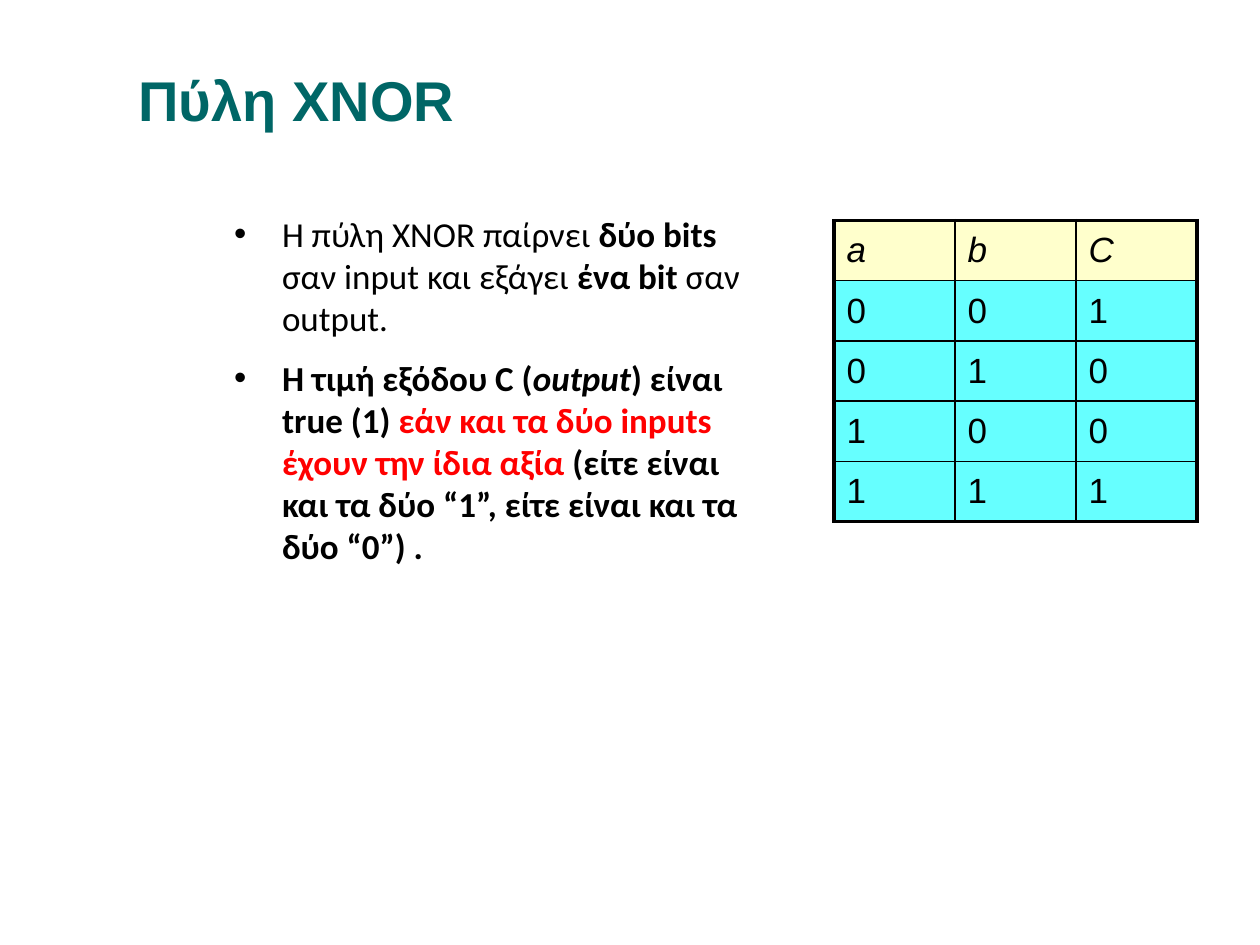
from lxml import etree
from pptx import Presentation
from pptx.dml.color import RGBColor
from pptx.enum.text import MSO_ANCHOR
from pptx.oxml.ns import qn
from pptx.util import Inches, Pt

MIDDLE, TOP = MSO_ANCHOR.MIDDLE, MSO_ANCHOR.TOP
COLORS = {"title": "006666", "text": "000000", "accent": "FF0000",
          "header": "FFFFCC", "body": "66FFFF", "border": "000000"}
TITLE = {"name": "Arial", "size": Pt(32), "bold": True}
BODY = {"name": "Calibri", "size": Pt(20)}
CELL = {"name": "Arial", "size": Pt(20)}
BOLD = {"bold": True}
THIN, THICK = Pt(1), Pt(2.25)

# Each bullet is a list of (words, format, colour) spans
BULLETS = [
    [("Η πύλη ΧΝOR παίρνει ", {}, "text"), ("δύο bits", BOLD, "text"),
     (" σαν input και εξάγει ", {}, "text"), ("ένα bit", BOLD, "text"),
     (" σαν output.", {}, "text")],
    [("Η τιμή εξόδου C (", BOLD, "text"),
     ("output", {"bold": True, "italic": True}, "text"),
     (") είναι true (1) ", BOLD, "text"),
     ("εάν και τα δύο inputs έχουν την ίδια αξία", BOLD, "accent"),
     (" (είτε είναι και τα δύο “1”, είτε είναι και τα δύο “0”) .", BOLD, "text")],
]
TRUTH_TABLE = ["abC", "001", "010", "100", "111"]


def add_span(para, words, formats, color):
    span = para.add_run()
    span.text = words
    for name, value in formats.items():
        setattr(span.font, name, value)
    span.font.color.rgb = RGBColor.from_string(COLORS[color])


def add_box(page, left, top, width, height, anchor):
    box = page.shapes.add_textbox(*map(Inches, (left, top, width, height)))
    box.text_frame.word_wrap = True
    box.text_frame.vertical_anchor = anchor
    return box.text_frame


def indent(para, left, first=0):
    properties = para._p.get_or_add_pPr()
    properties.set("marL", str(Inches(left)))
    properties.set("indent", str(Inches(first)))
    return properties


def add_title(page):
    para = add_box(page, 0.5, 0.16, 9, 1.25, MIDDLE).paragraphs[0]
    indent(para, 0.5)
    add_span(para, "Πύλη XΝOR", TITLE, "title")


def add_bullets(page):
    frame = add_box(page, 1.76, 1.64, 4.42, 4.95, TOP)
    for index, spans in enumerate(BULLETS):
        para = frame.add_paragraph() if index else frame.paragraphs[0]
        properties = indent(para, 0.38, -0.38)
        etree.SubElement(properties, qn("a:buFont"), typeface="Arial")
        etree.SubElement(properties, qn("a:buChar"), char="•")
        para.space_before = Pt(10 if index else 0)
        for words, formats, color in spans:
            add_span(para, words, BODY | formats, color)


def set_borders(cell, widths):
    properties = cell._tc.get_or_add_tcPr()
    for side, width in widths.items():
        line = etree.SubElement(properties, qn(f"a:ln{side}"), w=str(width))
        fill = etree.SubElement(line, qn("a:solidFill"))
        etree.SubElement(fill, qn("a:srgbClr"), val=COLORS["border"])


def add_truth_table(page):
    rows, columns = len(TRUTH_TABLE), len(TRUTH_TABLE[0])
    table = page.shapes.add_table(rows, columns, Inches(6.62), Inches(1.75),
                                  Inches(2.88), Inches(2.39)).table
    for row, values in enumerate(TRUTH_TABLE):
        for column, value in enumerate(values):
            cell = table.cell(row, column)
            # Thick lines around the table, thin ones inside
            outer = {"L": column == 0, "R": column == columns - 1,
                     "T": row == 0, "B": row == rows - 1}
            set_borders(cell, {side: THICK if edge else THIN
                               for side, edge in outer.items()})
            cell.fill.solid()
            cell.fill.fore_color.rgb = RGBColor.from_string(
                COLORS["body" if row else "header"])
            cell.vertical_anchor = MIDDLE
            add_span(cell.text_frame.paragraphs[0], value,
                     CELL | {"italic": row == 0}, "text")


def main():
    deck = Presentation()
    deck.slide_width, deck.slide_height = Inches(10), Inches(7.5)
    page = deck.slides.add_slide(deck.slide_layouts[6])
    add_title(page)
    add_bullets(page)
    add_truth_table(page)
    deck.save("out.pptx")


if __name__ == "__main__":
    main()
